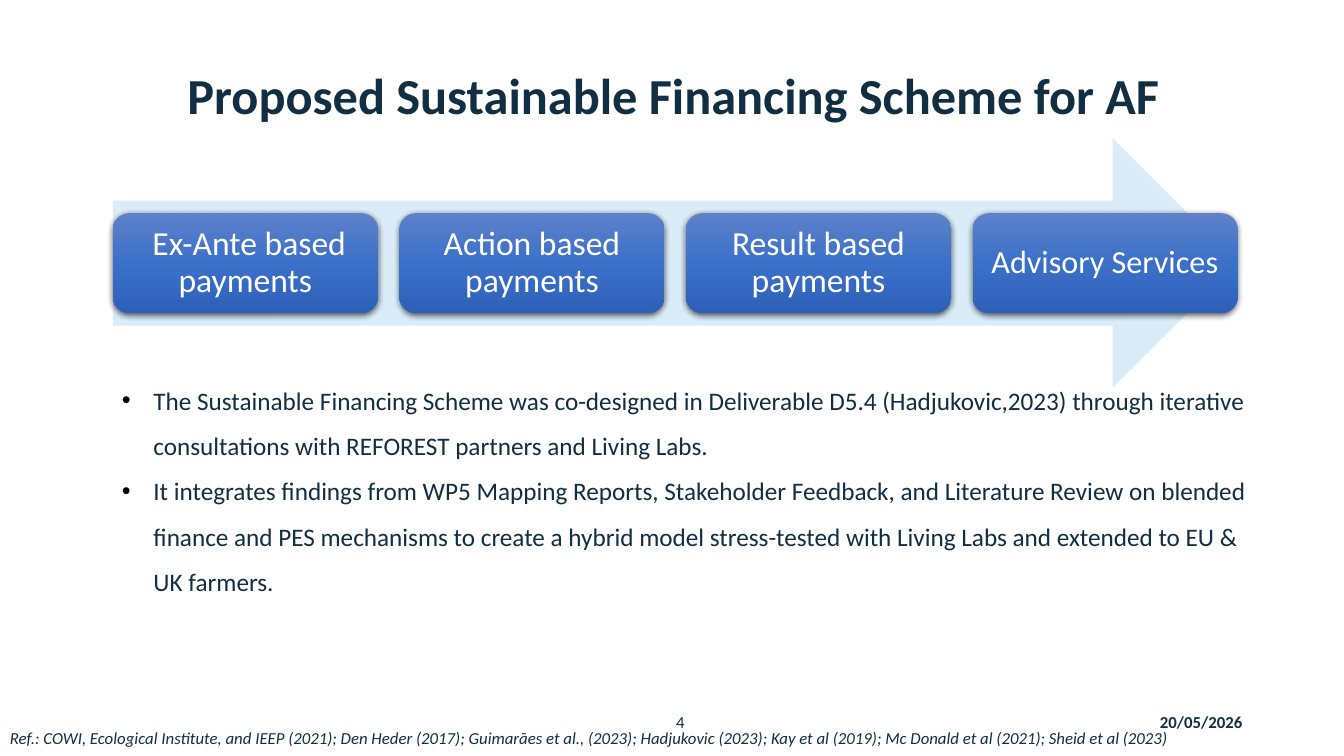
import pptx
import pptx.util
import pptx.dml.color
import pptx.enum.shapes
import pptx.enum.text
import pptx.oxml
import pptx.oxml.ns
from pptx.util import Pt

TITLE = "Proposed Sustainable Financing Scheme for AF"
PAYMENTS = [
    (" Ex-Ante based payments", 24),
    ("Action based payments", 24),
    ("Result based payments", 24),
    ("Advisory Services", 23),
]
BULLETS = [
    "The Sustainable Financing Scheme was co-designed in Deliverable D5.4 "
    "(Hadjukovic,2023) through iterative consultations with REFOREST partners "
    "and Living Labs.",
    "It integrates findings from WP5 Mapping Reports, Stakeholder Feedback, and "
    "Literature Review on blended finance and PES mechanisms to create a hybrid "
    "model stress-tested with Living Labs and extended to EU & UK farmers.",
]
REFERENCES = (
    "Ref.: COWI, Ecological Institute, and IEEP (2021); Den Heder (2017); "
    "Guimarães et al., (2023); Hadjukovic (2023); Kay et al (2019); "
    "Mc Donald et al (2021); Sheid et al (2023)"
)
DATE, PAGE = "20/05/2026", "4"

THEME = {
    "font": "Calibri",
    "ink": "112E43",
    "white": "FFFFFF",
    "arrow": "D9ECF8",
    "bullet": "000000",
    "card": [(0, "5E81C9"), (50, "3B70C9"), (100, "2E60B8")],
    "title": 36,
    "body": 18,
    "small": 12,
}

# left, top, width, height
ARROW = (80.6, 98.6, 803.5, 178.6)
CARD_W, CARD_H = 189.4, 71.3

ALIGN = pptx.enum.text.PP_ALIGN
ANCHOR = pptx.enum.text.MSO_ANCHOR
SHAPE = pptx.enum.shapes.MSO_SHAPE
NS = pptx.oxml.ns.nsdecls("a")


def rgb(code):
    return pptx.dml.color.RGBColor.from_string(code)


def add_xml(parent, xml):
    parent.append(pptx.oxml.parse_xml(xml))


def write(sp, text, size, color=THEME["ink"], bold=False, italic=False,
          align=ALIGN.LEFT, anchor=ANCHOR.TOP, spacing=None, bullet=False,
          inset=3.6):
    """Fill a shape with one paragraph, or with one for each item of a list."""
    tf = sp.text_frame
    tf.word_wrap = True
    tf.vertical_anchor = anchor
    tf.margin_left = tf.margin_right = Pt(7.2)
    tf.margin_top = tf.margin_bottom = Pt(inset)
    for i, line in enumerate([text] if isinstance(text, str) else text):
        p = tf.add_paragraph() if i else tf.paragraphs[0]
        if bullet:
            pPr = p._p.get_or_add_pPr()
            pPr.set("marL", str(Pt(22.5)))
            pPr.set("indent", str(-Pt(22.5)))
            add_xml(pPr, f'<a:buClr {NS}><a:srgbClr val="{THEME["bullet"]}"/></a:buClr>')
            add_xml(pPr, f'<a:buFont {NS} typeface="Arial"/>')
            add_xml(pPr, f'<a:buChar {NS} char="•"/>')
        p.alignment = align
        if spacing:
            p.line_spacing = spacing
        r = p.add_run()
        r.text = line
        r.font.name = THEME["font"]
        r.font.size = Pt(size)
        r.font.bold = bold
        r.font.italic = italic
        r.font.color.rgb = rgb(color)


def add_text(s, box, text, size, **fmt):
    write(s.shapes.add_textbox(*map(Pt, box)), text, size, **fmt)


def add_plain_shape(s, kind, box):
    sp = s.shapes.add_shape(kind, *map(Pt, box))
    sp.line.fill.background()
    sp.shadow.inherit = False
    return sp


def add_card(s, left, top, text, size):
    """Rounded card with a vertical gradient and a soft shadow."""
    sp = add_plain_shape(s, SHAPE.ROUNDED_RECTANGLE, (left, top, CARD_W, CARD_H))
    sp.fill.gradient()
    sp.fill.gradient_angle = 270
    spPr = sp._element.spPr
    stops = spPr.find(".//" + pptx.oxml.ns.qn("a:gsLst"))
    for stop in list(stops):
        stops.remove(stop)
    for position, color in THEME["card"]:
        add_xml(stops, f'<a:gs {NS} pos="{position * 1000}">'
                       f'<a:srgbClr val="{color}"/></a:gs>')
    add_xml(spPr.find(pptx.oxml.ns.qn("a:effectLst")),
            f'<a:outerShdw {NS} blurRad="{Pt(4.5)}" dist="{Pt(1.5)}" dir="5400000" '
            'algn="ctr" rotWithShape="0"><a:srgbClr val="000000">'
            '<a:alpha val="63000"/></a:srgbClr></a:outerShdw>')
    write(sp, text, size, color=THEME["white"], align=ALIGN.CENTER,
          anchor=ANCHOR.MIDDLE, spacing=0.9, inset=7.2)


def main():
    prs = pptx.Presentation()
    prs.slide_width, prs.slide_height = Pt(960), Pt(540)
    s = prs.slides.add_slide(prs.slide_layouts[6])

    add_text(s, (821.5, 501, 138, 28.8), DATE, THEME["small"], bold=True,
             anchor=ANCHOR.MIDDLE)
    add_text(s, (464.4, 501, 31.7, 28.8), PAGE, THEME["small"],
             align=ALIGN.RIGHT, anchor=ANCHOR.MIDDLE)
    add_text(s, (125.3, 43.9, 712, 49), TITLE, THEME["title"], bold=True,
             align=ALIGN.CENTER, anchor=ANCHOR.BOTTOM, spacing=0.9)

    arrow = add_plain_shape(s, SHAPE.RIGHT_ARROW, ARROW)
    arrow.fill.solid()
    arrow.fill.fore_color.rgb = rgb(THEME["arrow"])

    left, top, width, height = ARROW
    pitch = (width - CARD_W) / (len(PAYMENTS) - 1)
    for i, (text, size) in enumerate(PAYMENTS):
        add_card(s, left + i * pitch, top + (height - CARD_H) / 2, text, size)

    add_text(s, (0, 516.2, 897, 21.8), REFERENCES, THEME["small"], italic=True)
    add_text(s, (80, 260.6, 824.4, 170.6), BULLETS, THEME["body"],
             spacing=1.5, bullet=True)
    prs.save("out.pptx")


if __name__ == "__main__":
    main()
